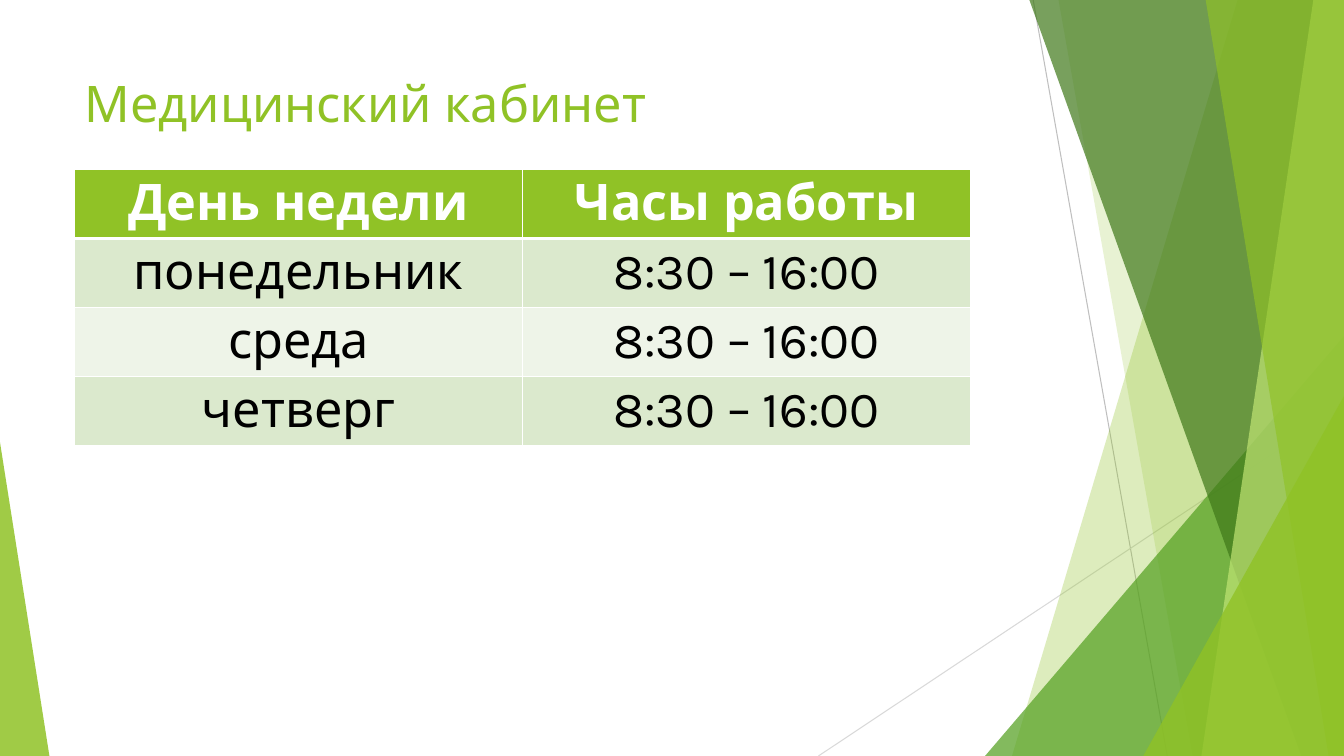
from dataclasses import dataclass

from lxml.etree import SubElement
from pptx import Presentation
from pptx.dml.color import RGBColor
from pptx.enum.shapes import MSO_CONNECTOR, MSO_SHAPE
from pptx.enum.text import MSO_ANCHOR, MSO_AUTO_SIZE, PP_ALIGN
from pptx.oxml import parse_xml
from pptx.oxml.ns import nsdecls, qn
from pptx.shapes.autoshape import Shape
from pptx.slide import Slide
from pptx.table import _Cell as Cell
from pptx.util import Pt


@dataclass(frozen=True)
class Theme:
    font: str = "Karla"
    text_size: float = 36
    lime: str = "90C226"
    leaf: str = "54A021"
    forest: str = "3F7819"
    pale: str = "C0E474"
    white: str = "FFFFFF"
    black: str = "000000"
    row_dark: str = "DBE9CD"
    row_light: str = "EEF4E8"
    ray_dark: str = "BFBFBF"
    ray_light: str = "D9D9D9"


@dataclass(frozen=True)
class Ray:
    start_x: float
    start_y: float
    end_x: float
    color: str


@dataclass(frozen=True)
class Band:
    top_x: float
    bottom_x: float
    color: str
    opacity: int


@dataclass(frozen=True)
class Wedge:
    left: float
    top: float
    width: float
    apex: float
    color: str
    opacity: int


THEME = Theme()
PAGE_WIDTH, PAGE_HEIGHT = 960, 540
BAND_TOP = -0.6
TABLE_LEFT, TABLE_TOP = 53.3, 121
COLUMN_WIDTH, ROW_HEIGHT = 320, 49.2
TITLE = "Медицинский кабинет"
HOURS = "8:30 – 16:00"
SCHEDULE = [("День недели", "Часы работы")] + [
    (day, HOURS) for day in ("понедельник", "среда", "четверг")
]
DECORATIONS = [
    Ray(738, 0, 833.8, THEME.ray_dark),
    Ray(960, 290.2, 584.6, THEME.ray_light),
    Band(884.2, 722.9, THEME.lime, 30),
    Band(756, 851.8, THEME.lime, 20),
    Wedge(703.6, 240, 256.4, 1, THEME.leaf, 72),
    Band(735.1, 929.5, THEME.forest, 70),
    Band(938.2, 858.2, THEME.pale, 70),
    Band(861.1, 949, THEME.lime, 65),
    Wedge(816.6, 282.8, 143.4, 1, THEME.lime, 80),
    Wedge(0, 316, 35.3, 0, THEME.lime, 85),
]


def rgb(color: str) -> RGBColor:
    return RGBColor.from_string(color)


def paint(shape: Shape, color: str, opacity: int) -> None:
    shape.shadow.inherit = False
    shape.line.fill.background()
    shape.fill.solid()
    shape.fill.fore_color.rgb = rgb(color)
    color_node = shape.element.spPr.find(qn("a:solidFill"))[0]
    SubElement(color_node, qn("a:alpha")).set("val", str(opacity * 1000))


def draw_ray(page: Slide, ray: Ray) -> None:
    line = page.shapes.add_connector(
        MSO_CONNECTOR.STRAIGHT,
        Pt(ray.start_x), Pt(ray.start_y), Pt(ray.end_x), Pt(PAGE_HEIGHT),
    )
    line.line.color.rgb = rgb(ray.color)
    line.line.width = Pt(0.75)
    SubElement(line.element.spPr, qn("a:effectLst"))


def draw_band(page: Slide, band: Band) -> None:
    builder = page.shapes.build_freeform(Pt(band.top_x), Pt(BAND_TOP))
    corners = [
        (PAGE_WIDTH, BAND_TOP),
        (PAGE_WIDTH, PAGE_HEIGHT),
        (band.bottom_x, PAGE_HEIGHT),
    ]
    builder.add_line_segments([(Pt(x), Pt(y)) for x, y in corners], close=True)
    paint(builder.convert_to_shape(), band.color, band.opacity)


def draw_wedge(page: Slide, wedge: Wedge) -> None:
    triangle = page.shapes.add_shape(
        MSO_SHAPE.ISOSCELES_TRIANGLE,
        Pt(wedge.left), Pt(wedge.top),
        Pt(wedge.width), Pt(PAGE_HEIGHT - wedge.top),
    )
    triangle.adjustments[0] = wedge.apex
    paint(triangle, wedge.color, wedge.opacity)


def draw_title(page: Slide) -> None:
    title = page.shapes.title
    title.left, title.top, title.width, title.height = (
        Pt(53.3), Pt(48), Pt(677), Pt(104)
    )
    title.element.getparent().append(title.element)
    frame = title.text_frame
    frame.text = TITLE
    frame.word_wrap = True
    frame.auto_size = MSO_AUTO_SIZE.NONE
    frame.vertical_anchor = MSO_ANCHOR.TOP
    para = frame.paragraphs[0]
    para.alignment = PP_ALIGN.LEFT
    para.font.name = THEME.font
    para.font.size = Pt(THEME.text_size)
    para.font.color.rgb = rgb(THEME.lime)


def set_borders(cell: Cell, row: int) -> None:
    widths = {"L": 1, "R": 1, "T": 3 if row == 1 else 1, "B": 3 if row == 0 else 1}
    properties = cell._tc.get_or_add_tcPr()
    for index, (side, width) in enumerate(widths.items()):
        border = parse_xml(
            f'<a:ln{side} {nsdecls("a")} w="{Pt(width)}"><a:solidFill>'
            f'<a:srgbClr val="{THEME.white}"/></a:solidFill></a:ln{side}>'
        )
        properties.insert(index, border)


def format_cell(cell: Cell, text: str, row: int) -> None:
    header = row == 0
    body_fill = THEME.row_dark if row % 2 else THEME.row_light
    cell.text = text
    cell.fill.solid()
    cell.fill.fore_color.rgb = rgb(THEME.lime if header else body_fill)
    set_borders(cell, row)
    para = cell.text_frame.paragraphs[0]
    para.alignment = PP_ALIGN.CENTER
    para.font.name = THEME.font
    para.font.size = Pt(THEME.text_size)
    para.font.bold = header
    para.font.color.rgb = rgb(THEME.white if header else THEME.black)


def draw_schedule(page: Slide) -> None:
    rows, columns = len(SCHEDULE), len(SCHEDULE[0])
    table = page.shapes.add_table(
        rows, columns, Pt(TABLE_LEFT), Pt(TABLE_TOP),
        Pt(COLUMN_WIDTH * columns), Pt(ROW_HEIGHT * rows),
    ).table
    for row, texts in enumerate(SCHEDULE):
        for column, text in enumerate(texts):
            format_cell(table.cell(row, column), text, row)


def main() -> None:
    deck = Presentation()
    deck.slide_width, deck.slide_height = Pt(PAGE_WIDTH), Pt(PAGE_HEIGHT)
    page = deck.slides.add_slide(deck.slide_layouts[5])
    painters = {Ray: draw_ray, Band: draw_band, Wedge: draw_wedge}
    for decoration in DECORATIONS:
        painters[type(decoration)](page, decoration)
    draw_title(page)
    draw_schedule(page)
    deck.save("out.pptx")


if __name__ == "__main__":
    main()
